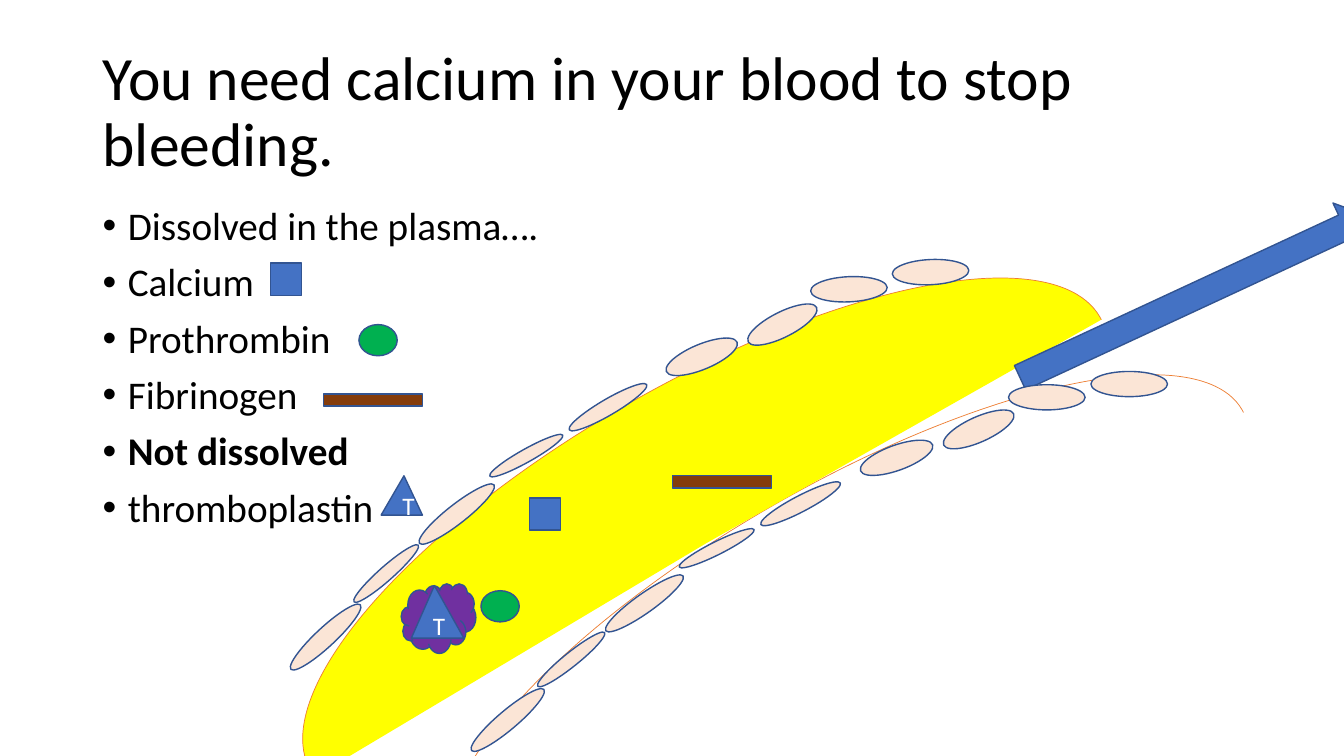
from math import cos, radians, sin

from lxml import etree
from pptx import Presentation
from pptx.dml.color import RGBColor
from pptx.enum.shapes import MSO_SHAPE as SHAPE
from pptx.enum.text import MSO_ANCHOR as ANCHOR, PP_ALIGN as ALIGN
from pptx.oxml.ns import qn
from pptx.util import Inches, Pt

# Content
TITLE = "You need calcium in your blood to stop bleeding."
BULLETS = [  # text, bold
    ("Dissolved in the plasma….", False),
    ("Calcium", False),
    ("Prothrombin", False),
    ("Fibrinogen", False),
    ("Not dissolved", True),
    ("thromboplastin", False),
]
TITLE_BOX = (0.92, 0.4, 11.5, 1.45)
BODY_BOX = (0.92, 2, 11.5, 4.76)

# Each dissolved substance: shape, fill, size, place in the key, place in the vessel
SUBSTANCES = [
    (SHAPE.RECTANGLE, "calcium", (0.31, 0.32), (2.68, 2.61), (5.25, 4.94)),
    (SHAPE.OVAL, "prothrombin", (0.38, 0.31), (3.56, 3.22), (4.77, 5.86)),
    (SHAPE.RECTANGLE, "fibrinogen", (0.98, 0.12), (3.21, 3.91), (6.67, 4.72)),
]
KEY_TRIANGLE = ((3.78, 4.72, 0.41, 0.39), 0.554)
PLATELET = (3.98, 5.79, 0.74, 0.69)
PLATELET_TRIANGLE = ((4.08, 5.81, 0.52, 0.52), 0.44)

VESSEL_ARCS = [((3.89, 4.82, 9.03, 2.99), None), ((2.48, 3.81, 9.03, 3.17), "plasma")]
ARC_ANGLES = (107.441, 0.233)
ARC_TURN = 330.1
FLOW_ARROW = ((9.94, 2.68, 3.81, 0.53), 335.1)

# Upper wall cells: centre x, centre y, width, height, rotation
WALL_CELLS = [
    (9.23, 2.7, 0.76, 0.25, 357.3),
    (8.42, 2.87, 0.76, 0.25, 357.3),
    (3.83, 5.69, 0.85, 0.14, 318.5),
    (4.53, 5.1, 0.94, 0.19, 321.9),
    (5.22, 4.52, 0.83, 0.13, 330.7),
    (6.03, 4.04, 0.89, 0.16, 329.7),
    (6.96, 3.54, 0.76, 0.25, 337.4),
    (7.76, 3.22, 0.76, 0.25, 333.2),
    (3.23, 6.32, 0.94, 0.19, 317.1),
]
# The lower wall is the upper one turned about its first cell and moved
WALLS = [((9.23, 2.7), 0), ((11.2, 3.81), 2.7)]

THEME = {
    "font": "Calibri",
    "title": 44, "body": 28, "label": 18,
    "text": "000000", "label_text": "FFFFFF",
    "calcium": "4472C4", "prothrombin": "00B050", "fibrinogen": "843C0B",
    "thromboplastin": "4472C4", "platelet": "7030A0", "arrow": "4472C4",
    "plasma": "FFFF00", "cell": "FBE5D6",
    "outline": "325491", "vessel_line": "ED7D31",
}

prs = Presentation()
prs.slide_width, prs.slide_height = Inches(13.33), Inches(7.5)
s = prs.slides.add_slide(prs.slide_layouts[6])


def color(name):
    return RGBColor.from_string(THEME[name])


def style_run(r, size, ink, bold=False):
    r.font.name, r.font.size, r.font.bold = THEME["font"], Pt(THEME[size]), bold
    r.font.color.rgb = color(ink)


def add_text_box(box):
    tf = s.shapes.add_textbox(*map(Inches, box)).text_frame
    tf.word_wrap = True
    return tf


def add_figure(kind, box, fill, turn=0, line="outline", width=1, adj=()):
    sp = s.shapes.add_shape(kind, *map(Inches, box))
    sp.shadow.inherit = False
    sp.rotation = turn
    for i, value in enumerate(adj):
        sp.adjustments[i] = value
    if fill:
        sp.fill.solid()
        sp.fill.fore_color.rgb = color(fill)
    else:
        sp.fill.background()
    sp.line.color.rgb = color(line)
    sp.line.width = Pt(width)
    return sp


def add_thromboplastin(box, apex):
    tf = add_figure(SHAPE.ISOSCELES_TRIANGLE, box, "thromboplastin", adj=[apex]).text_frame
    tf.text = "T"
    tf.vertical_anchor = ANCHOR.MIDDLE
    p = tf.paragraphs[0]
    p.alignment = ALIGN.CENTER
    style_run(p.runs[0], "label", "label_text")


# Title
tf = add_text_box(TITLE_BOX)
tf.text = TITLE
tf.vertical_anchor = ANCHOR.MIDDLE
tf.paragraphs[0].line_spacing = 0.9
style_run(tf.paragraphs[0].runs[0], "title", "text")

# Bulleted list
tf = add_text_box(BODY_BOX)
tf.text = "\n".join(text for text, _ in BULLETS)
for p, (_, bold) in zip(tf.paragraphs, BULLETS):
    p.line_spacing, p.space_before = 0.9, Pt(10)
    pPr = p._p.get_or_add_pPr()
    pPr.set("marL", str(Inches(0.25)))
    pPr.set("indent", str(-Inches(0.25)))
    etree.SubElement(pPr, qn("a:buFont")).set("typeface", "Arial")
    etree.SubElement(pPr, qn("a:buChar")).set("char", "•")
    style_run(p.runs[0], "body", "text", bold)

# Blood vessel
for box, fill in VESSEL_ARCS:
    add_figure(SHAPE.ARC, box, fill, ARC_TURN, "vessel_line", 0.5, ARC_ANGLES)

# Substances, in the key and in the plasma
for kind, fill, size, *places in SUBSTANCES:
    for place in places:
        add_figure(kind, place + size, fill)

# Thromboplastin, in the key and inside the platelet
add_thromboplastin(*KEY_TRIANGLE)
add_figure(SHAPE.CLOUD, PLATELET, "platelet")
add_thromboplastin(*PLATELET_TRIANGLE)

# Blood flow
box, turn = FLOW_ARROW
add_figure(SHAPE.RIGHT_ARROW, box, "arrow", turn)

# Wall cells
x0, y0 = WALL_CELLS[0][:2]
for (wall_x, wall_y), tilt in WALLS:
    c, n = cos(radians(tilt)), sin(radians(tilt))
    for x, y, w, h, turn in WALL_CELLS:
        dx, dy = x - x0, y - y0
        cx, cy = wall_x + dx * c - dy * n, wall_y + dx * n + dy * c
        add_figure(SHAPE.OVAL, (cx - w / 2, cy - h / 2, w, h), "cell", (turn + tilt) % 360)

prs.save("out.pptx")
